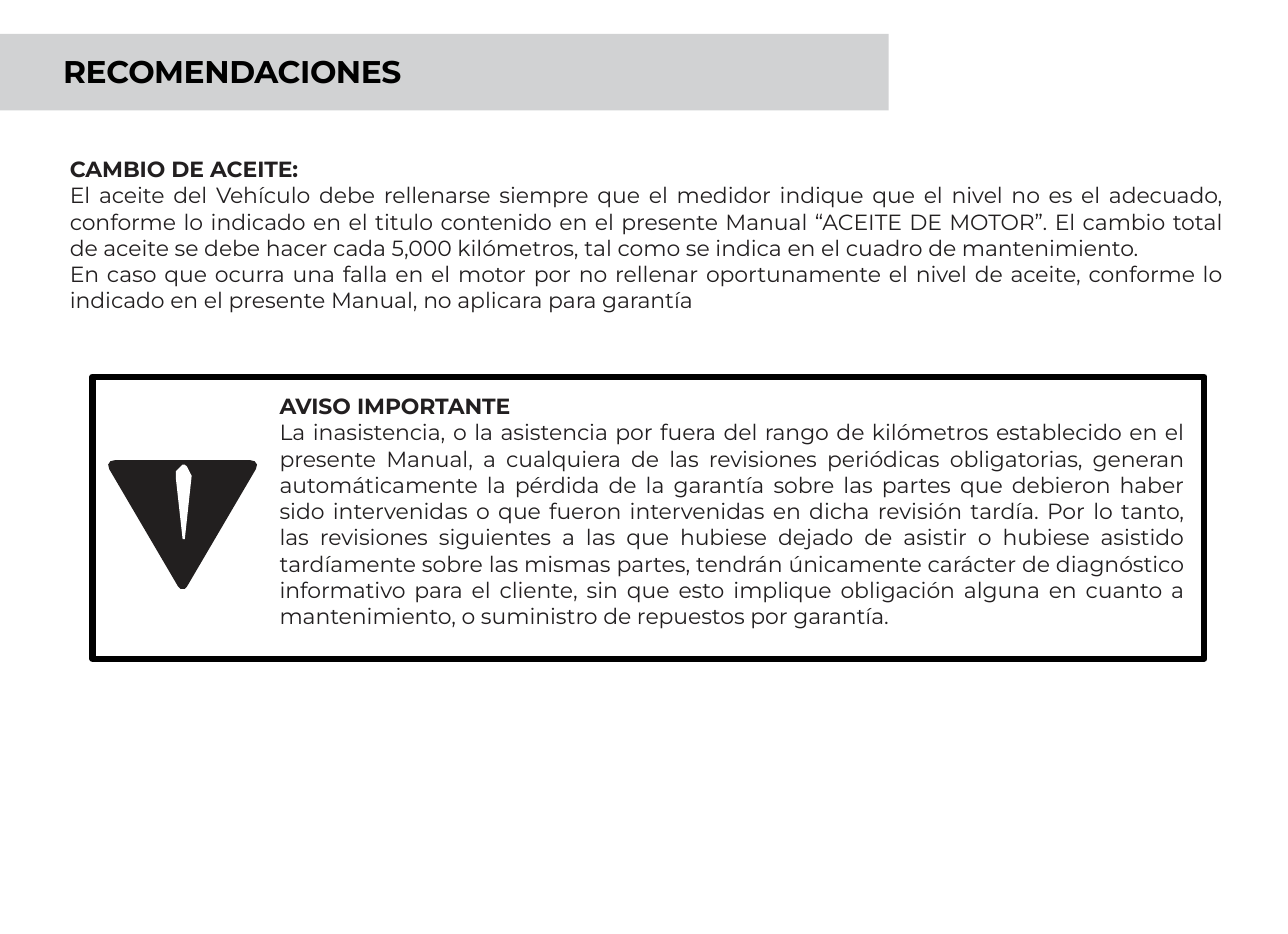
"""Build the slide of oil-change recommendations and the warranty notice."""
from pptx import Presentation
from pptx.dml.color import RGBColor
from pptx.enum import shapes, text
from pptx.util import Inches, Pt

HUES = {"ink": "221F20", "black": "000000", "white": "FFFFFF",
        "band": "D1D2D3", "sign": "221F1F"}

OIL = [
    "El aceite del Vehículo debe rellenarse siempre que el medidor indique que "
    "el nivel no es el adecuado, conforme lo indicado en el titulo contenido en "
    "el presente Manual “ACEITE DE MOTOR”. El cambio total de aceite se debe "
    "hacer cada 5,000 kilómetros, tal como se indica en el cuadro de "
    "mantenimiento.",
    "En caso que ocurra una falla en el motor por no rellenar oportunamente el "
    "nivel de aceite, conforme lo indicado en el presente Manual, no aplicara "
    "para garantía",
]
NOTICE = [
    "La inasistencia, o la asistencia por fuera del rango de kilómetros "
    "establecido en el presente Manual, a cualquiera de las revisiones "
    "periódicas obligatorias, generan automáticamente la pérdida de la garantía "
    "sobre las partes que debieron haber sido intervenidas o que fueron "
    "intervenidas en dicha revisión tardía. Por lo tanto, las revisiones "
    "siguientes a las que hubiese dejado de asistir o hubiese asistido "
    "tardíamente sobre las mismas partes, tendrán únicamente carácter de "
    "diagnóstico informativo para el cliente, sin que esto implique obligación "
    "alguna en cuanto a mantenimiento, o suministro de repuestos por garantía.",
]
WEDGE = [(1.11, 2.04), (0.51, 2.04), (0.49, 2.045), (0.48, 2.06), (0.485, 2.08),
         (0.79, 2.6), (0.8, 2.61), (0.82, 2.61), (0.83, 2.6), (1.135, 2.08),
         (1.14, 2.06), (1.13, 2.045)]
MARK = [(0.81, 2.06), (0.78, 2.09), (0.78, 2.12), (0.81, 2.39), (0.82, 2.39),
        (0.85, 2.11), (0.83, 2.07), (0.82, 2.06)]


def paint(shape, fill=None, line=None, width=2):
    """Set the fill and outline of a shape and drop its shadow."""
    shape.shadow.inherit = False
    if fill:
        shape.fill.solid()
        shape.fill.fore_color.rgb = RGBColor.from_string(HUES[fill])
    else:
        shape.fill.background()
    if line:
        shape.line.color.rgb = RGBColor.from_string(HUES[line])
        shape.line.width = Pt(width)
    else:
        shape.line.fill.background()


def add_box(slide, left, top, width, height, **look):
    """Add a painted rectangle."""
    box = slide.shapes.add_shape(
        shapes.MSO_SHAPE.RECTANGLE,
        Inches(left), Inches(top), Inches(width), Inches(height))
    paint(box, **look)
    return box


def add_text(slide, left, top, width, height):
    """Add an empty text box."""
    return slide.shapes.add_textbox(
        Inches(left), Inches(top), Inches(width), Inches(height))


def add_form(slide, points, fill):
    """Add a closed outline through points in inches."""
    first, *rest = [(Inches(x), Inches(y)) for x, y in points]
    form = slide.shapes.build_freeform(*first)
    form.add_line_segments(rest, close=True)
    paint(form.convert_to_shape(), fill=fill)


def write(shape, head, body=(), size=7, color="ink", align="JUSTIFY",
          left=0.01, top=0.01, right=0.01, tight=0):
    """Write a bold heading and plain paragraphs into a shape."""
    frame = shape.text_frame
    frame.word_wrap = True
    frame.vertical_anchor = text.MSO_ANCHOR.TOP
    frame.margin_left, frame.margin_right = Inches(left), Inches(right)
    frame.margin_top, frame.margin_bottom = Inches(top), 0
    for i, words in enumerate([head, *body]):
        para = frame.add_paragraph() if i else frame.paragraphs[0]
        para.alignment = text.PP_ALIGN[align]
        run = para.add_run()
        run.text = words
        run.font.name = "Montserrat"
        run.font.size = Pt(size)
        run.font.bold = i == 0
        run.font.color.rgb = RGBColor.from_string(HUES[color])
        if tight:
            run.font._element.set("spc", str(-tight))


def main():
    """Build and save the slide."""
    deck = Presentation()
    deck.slide_width, deck.slide_height = Inches(5.71), Inches(4.14)
    slide = deck.slides.add_slide(deck.slide_layouts[6])

    write(add_text(slide, 0.3, 0.68, 5.13, 0.72), "CAMBIO DE ACEITE:", OIL)

    notice = add_box(slide, 0.41, 1.67, 4.93, 1.25, line="black")
    write(notice, "AVISO IMPORTANTE", NOTICE, left=0.83, top=0.07, right=0.09)
    add_form(slide, WEDGE, "sign")
    add_form(slide, MARK, "white")

    add_box(slide, 0, 0.15, 3.94, 0.34, fill="band")
    write(add_text(slide, 0.27, 0.22, 3.63, 0.19), "RECOMENDACIONES",
          size=10, color="black", align="LEFT", tight=10)

    deck.save("out.pptx")


if __name__ == "__main__":
    main()
